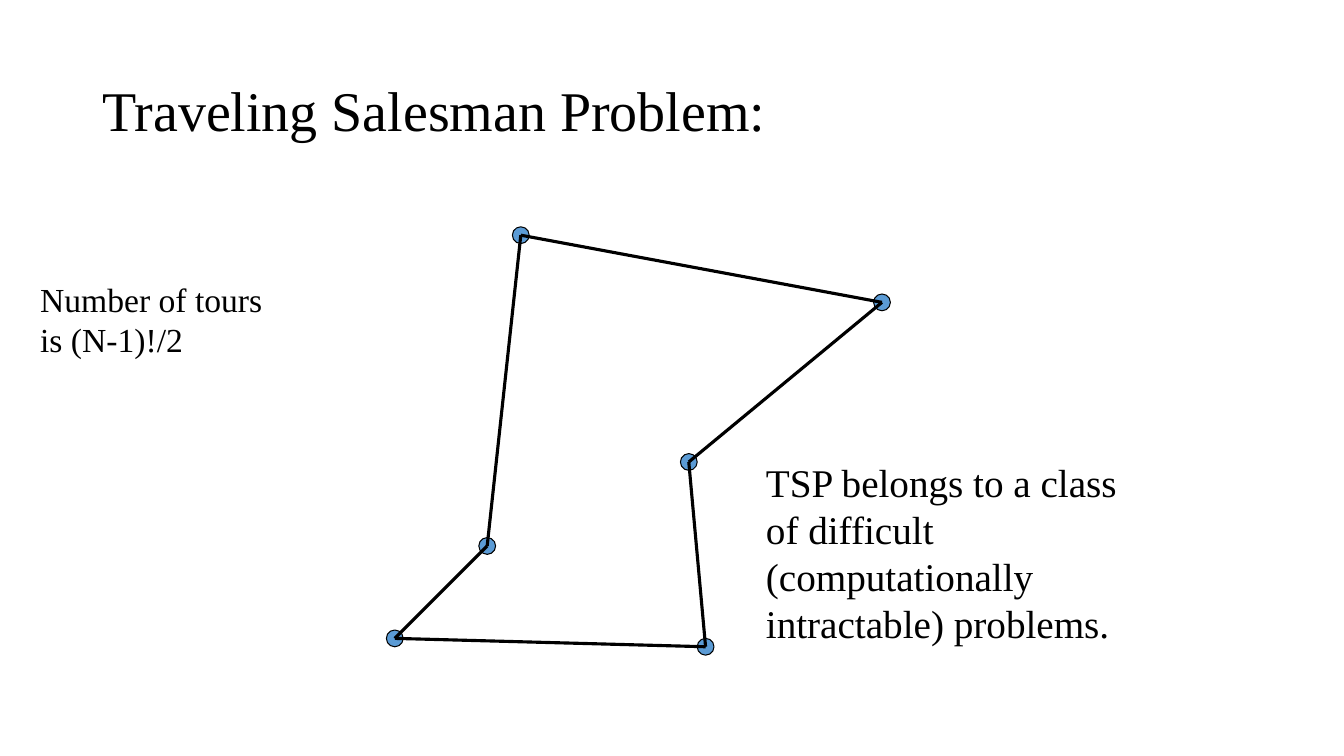
"""Build the tour slide on a grid of 160 by 90 cells."""
from pptx import Presentation
from pptx.dml.color import RGBColor
from pptx.enum.shapes import MSO_CONNECTOR, MSO_SHAPE
from pptx.enum.text import MSO_ANCHOR, PP_ALIGN
from pptx.util import Inches, Pt
from lxml.etree import SubElement
from pptx.oxml.ns import qn

deck = Presentation()
deck.slide_width, deck.slide_height = Inches(13.333), Inches(7.5)
cell = deck.slide_width / 160
slide = deck.slides.add_slide(deck.slide_layouts[5])


def paint(part, code):
    part.rgb = RGBColor.from_string(code)


def write(shape, text, place, size, look):
    for name, value in zip(("left", "top", "width", "height"), place):
        setattr(shape, name, int(value * cell))
    frame = shape.text_frame
    frame.word_wrap = True
    frame.text = text
    para = frame.paragraphs[0]
    for name, value in look.items():
        setattr(para, name, value)
    font = para.runs[0].font
    for name, value in {"name": "Times New Roman", "size": Pt(size)}.items():
        setattr(font, name, value)
    paint(font.color, "000000")


title = slide.shapes.title
write(title, "Traveling Salesman Problem:", (11, 4.8, 138, 17.4), 40,
      {"alignment": PP_ALIGN.LEFT, "line_spacing": 0.9})
title.text_frame.vertical_anchor = MSO_ANCHOR.MIDDLE

tour = [(62, 28), (58, 65), (47, 76), (84, 77), (82, 55), (105, 36)]

for col, row in tour:
    box = [int(n * cell) for n in (col - 1, row - 1, 2, 2)]
    dot = slide.shapes.add_shape(MSO_SHAPE.OVAL, *box)
    dot.shadow.inherit = False
    dot.fill.solid()
    paint(dot.fill.fore_color, "5B9BD5")
    paint(dot.line.color, "000000")
    dot.line.width = Pt(0.75)

for start, end in zip(tour, tour[1:] + tour[:1]):
    ends = [int(n * cell) for n in start + end]
    leg = slide.shapes.add_connector(MSO_CONNECTOR.STRAIGHT, *ends)
    paint(leg.line.color, "000000")
    leg.line.width = Pt(2.25)
    SubElement(leg._element.spPr, qn("a:effectLst"))

notes = [
    ("TSP belongs to a class of difficult (computationally intractable) problems.",
     (90, 54, 45, 23.6), 28),
    ("Number of tours is (N-1)!/2", (3.6, 32.6, 32, 10.9), 24),
]
for text, place, size in notes:
    write(slide.shapes.add_textbox(0, 0, 0, 0), text, place, size,
          {"alignment": PP_ALIGN.LEFT})

deck.save("out.pptx")
